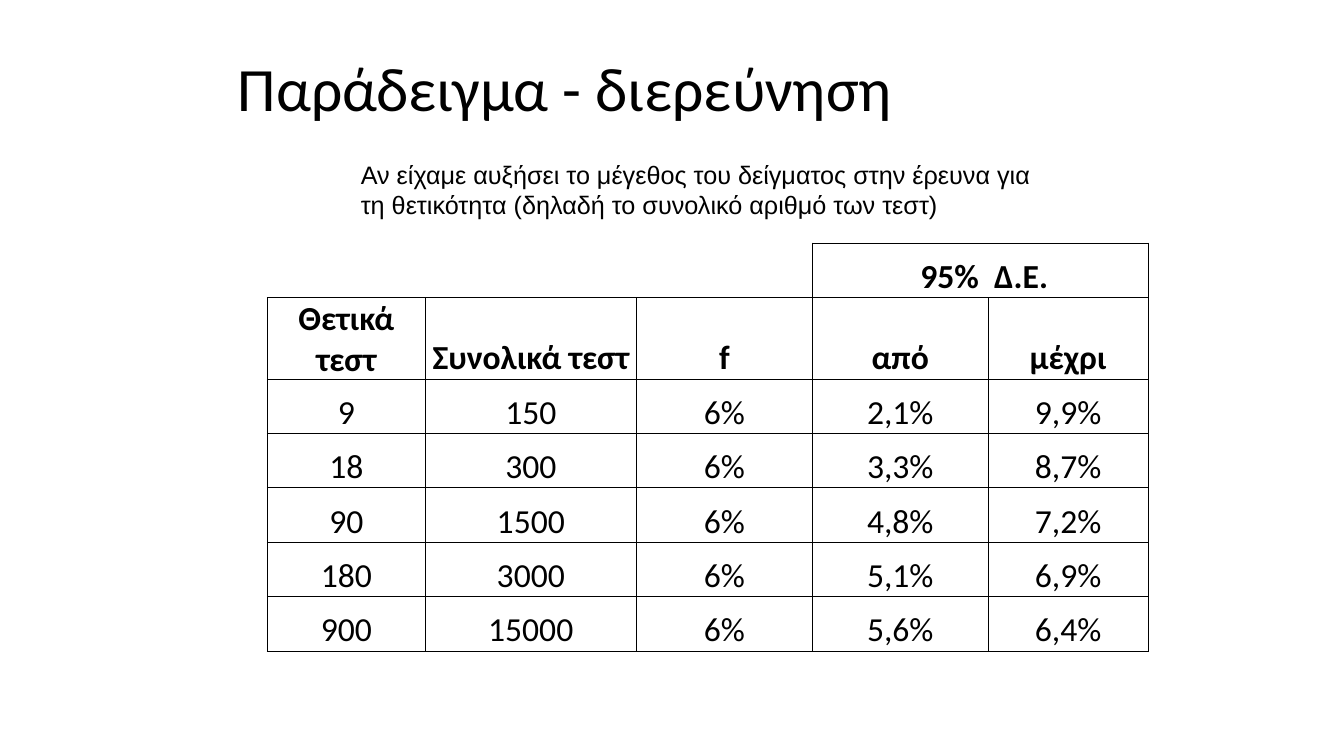
from lxml import etree
from pptx import Presentation
from pptx.dml.color import RGBColor
from pptx.enum.text import MSO_ANCHOR, PP_ALIGN
from pptx.oxml.ns import qn
from pptx.util import Inches, Pt

MIDDLE, TOP, BOTTOM = MSO_ANCHOR.MIDDLE, MSO_ANCHOR.TOP, MSO_ANCHOR.BOTTOM
CENTER = PP_ALIGN.CENTER
BLACK = "000000"
BORDER_WIDTH = Pt(0.5)

TITLE = "Παράδειγμα - διερεύνηση"
NOTE = ("Αν είχαμε αυξήσει το μέγεθος του δείγματος στην έρευνα για "
        "τη θετικότητα (δηλαδή το συνολικό αριθμό των τεστ)")
COL_WIDTHS = [1.57, 2.09, 1.75, 1.74, 1.59]
ROW_HEIGHTS = [0.54, 0.81] + [0.54] * 5
INTERVAL_COL = 3
ROWS = [
    ["", "", "", " 95%  Δ.Ε.", ""],
    ["Θετικά τεστ", "Συνολικά τεστ", "f", "από", "μέχρι"],
    ["9", "150", "6%", "2,1%", "9,9%"],
    ["18", "300", "6%", "3,3%", "8,7%"],
    ["90", "1500", "6%", "4,8%", "7,2%"],
    ["180", "3000", "6%", "5,1%", "6,9%"],
    ["900", "15000", "6%", "5,6%", "6,4%"],
]


def color(hex_value):
    """Turn a hex string into a colour."""
    return RGBColor.from_string(hex_value)


def style_font(p, size, name, bold=False):
    """Format every run of a paragraph."""
    for r in p.runs:
        r.font.size = Pt(size)
        r.font.name = name
        r.font.bold = bold
        r.font.color.rgb = color(BLACK)


def add_text(s, box, text, size, font, anchor=TOP, spacing=1.0):
    """Place a wrapped text box in the given box."""
    sp = s.shapes.add_textbox(*map(Inches, box))
    tf = sp.text_frame
    tf.word_wrap = True
    tf.vertical_anchor = anchor
    tf.text = text
    p = tf.paragraphs[0]
    p.line_spacing = spacing
    style_font(p, size, font)


def set_borders(cell, sides):
    """Draw the named sides (L, R, T, B) of a cell and clear the others."""
    tc_pr = cell._tc.get_or_add_tcPr()
    for i, side in enumerate("LRTB"):
        ln = etree.Element(qn(f"a:ln{side}"), w=str(BORDER_WIDTH))
        if side in sides:
            fill = etree.SubElement(ln, qn("a:solidFill"))
            etree.SubElement(fill, qn("a:srgbClr"), val=BLACK)
        else:
            etree.SubElement(ln, qn("a:noFill"))
        tc_pr.insert(i, ln)


def fill_cell(cell, text, bold):
    """Write centred text at the bottom of a cell."""
    cell.fill.background()
    cell.vertical_anchor = BOTTOM
    cell.margin_left = cell.margin_right = cell.margin_top = Inches(0.01)
    cell.margin_bottom = 0
    cell.text = text
    p = cell.text_frame.paragraphs[0]
    p.alignment = CENTER
    style_font(p, 24, "Calibri", bold)


def add_results_table(s, left, top):
    """Place the table of sample sizes and confidence intervals."""
    frame = s.shapes.add_table(
        len(ROWS), len(COL_WIDTHS), Inches(left), Inches(top),
        Inches(sum(COL_WIDTHS)), Inches(sum(ROW_HEIGHTS)))
    table = frame.table
    table.first_row = table.horz_banding = False
    for column, width in zip(table.columns, COL_WIDTHS):
        column.width = Inches(width)
    for row, height in zip(table.rows, ROW_HEIGHTS):
        row.height = Inches(height)
    for i, values in enumerate(ROWS):
        for j, text in enumerate(values):
            cell = table.cell(i, j)
            fill_cell(cell, text, bold=i < 2)
            if i or j >= INTERVAL_COL:
                set_borders(cell, "LRTB")
            else:
                set_borders(cell, "RB" if j == INTERVAL_COL - 1 else "B")
    table.cell(0, INTERVAL_COL).merge(table.cell(0, INTERVAL_COL + 1))


def build_slide(prs):
    """Build the slide with its title, table and note."""
    s = prs.slides.add_slide(prs.slide_layouts[6])
    add_text(s, (2.26, 0.28, 9, 1.25), TITLE, 44, "Calibri", MIDDLE, 0.9)
    add_results_table(s, 2.65, 2.41)
    add_text(s, (3.48, 1.53, 7.09, 0.71), NOTE, 18, "Arial")


def main():
    """Create and save the presentation."""
    prs = Presentation()
    prs.slide_width, prs.slide_height = Inches(13.33), Inches(7.5)
    build_slide(prs)
    prs.save("out.pptx")


if __name__ == "__main__":
    main()
